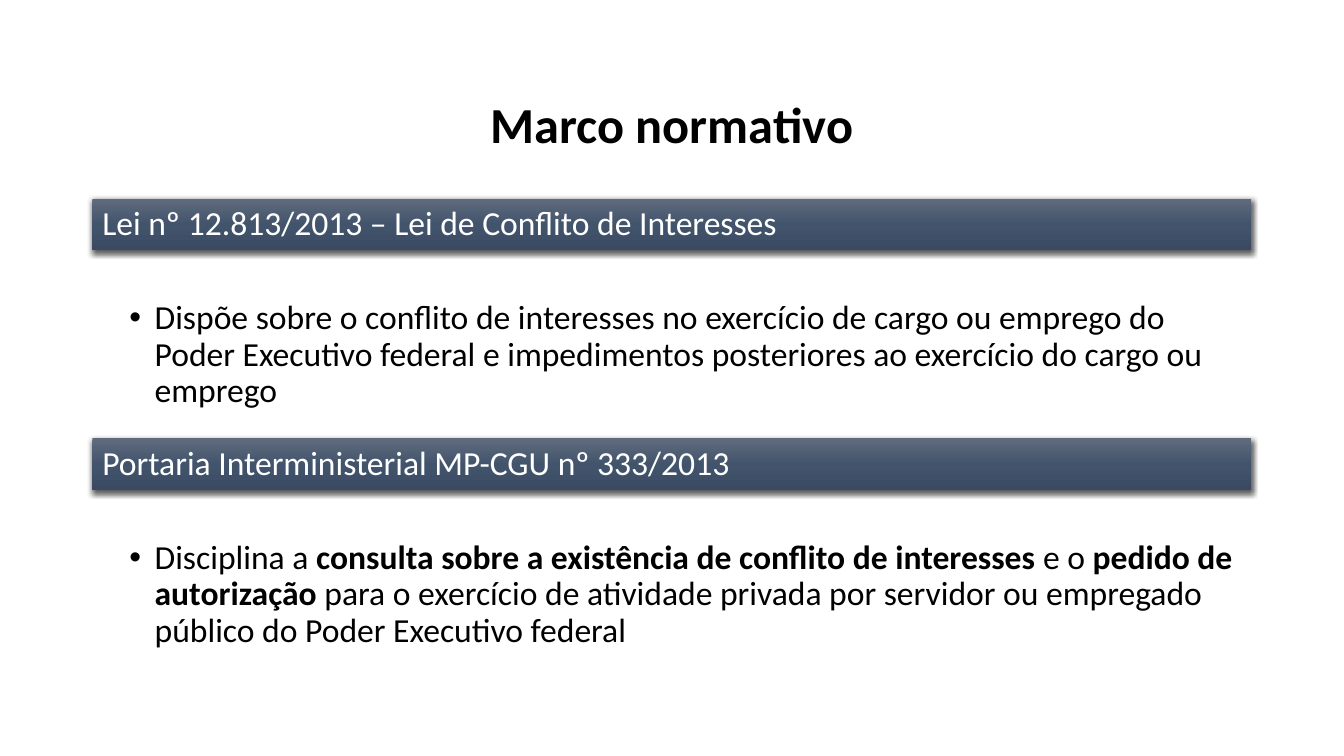
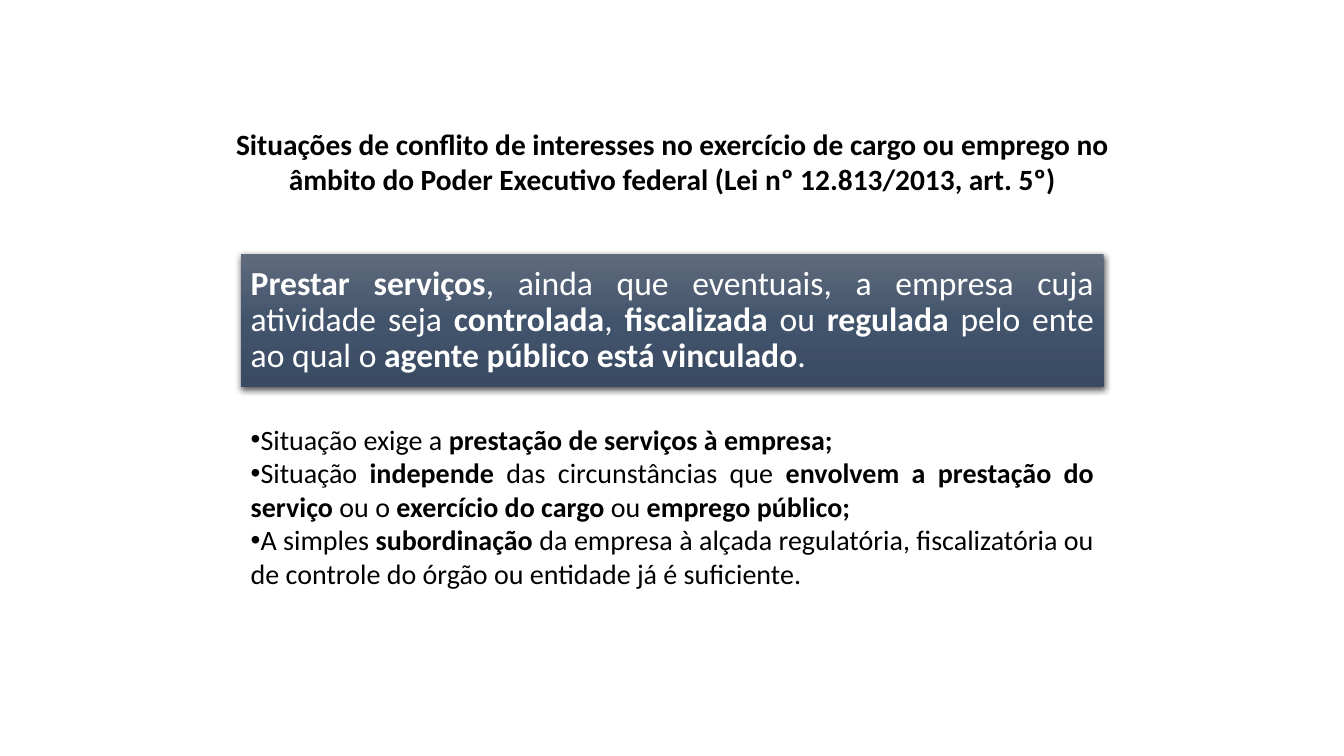
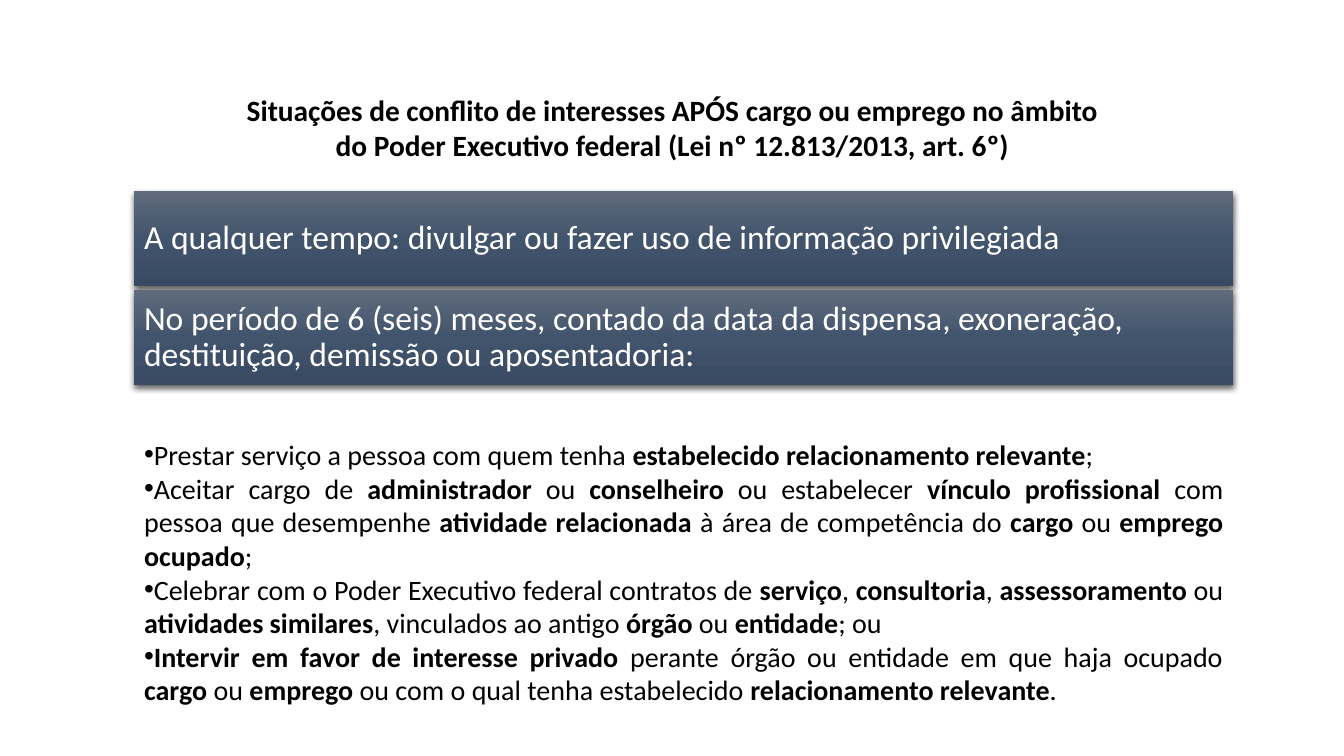
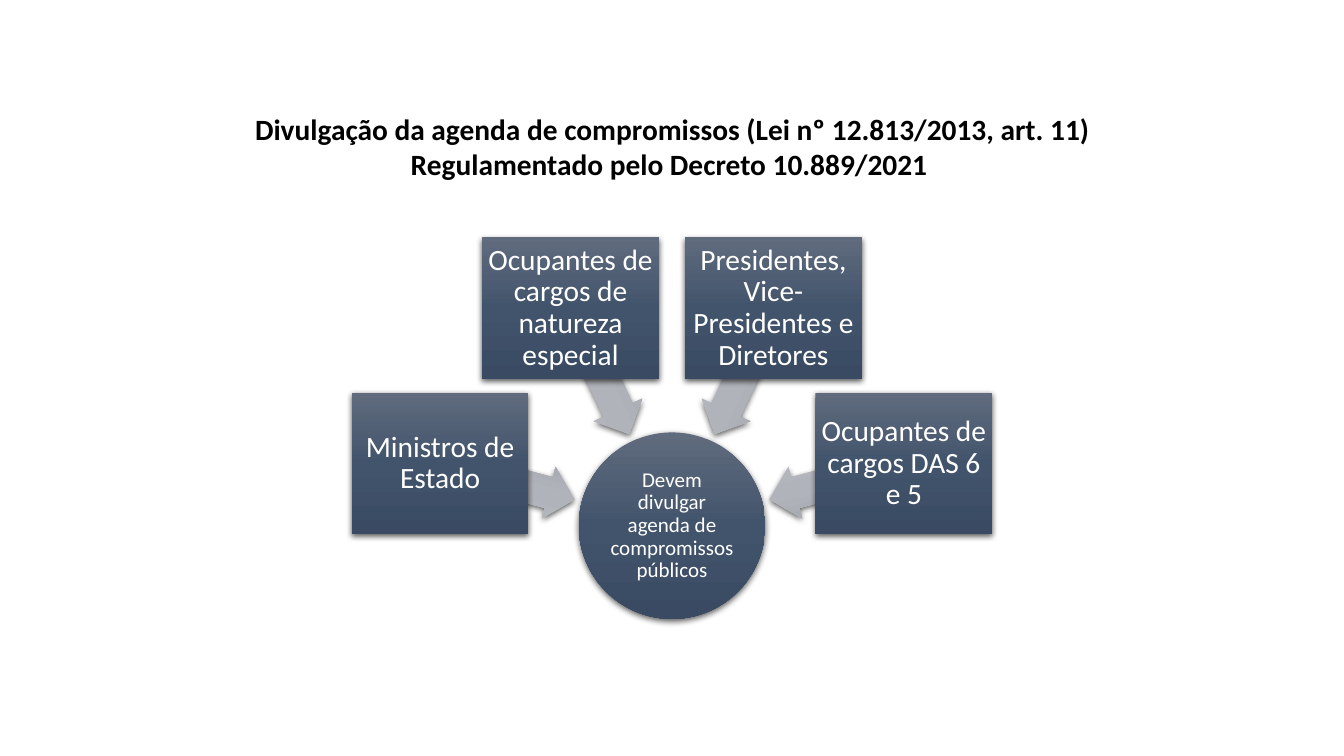
"""Build four slides on the Brazilian conflict of interests law."""
from copy import deepcopy
from dataclasses import dataclass
from math import cos, radians, sin

from lxml import etree
from pptx import Presentation
from pptx.dml.color import RGBColor
from pptx.enum.shapes import MSO_SHAPE
from pptx.enum.text import MSO_ANCHOR, MSO_AUTO_SIZE, PP_ALIGN
from pptx.oxml.ns import qn
from pptx.presentation import Presentation as Deck
from pptx.shapes.autoshape import Shape
from pptx.slide import Slide
from pptx.text.text import TextFrame
from pptx.util import Pt

RECTANGLE = MSO_SHAPE.RECTANGLE
ELLIPSE = MSO_SHAPE.OVAL
LEFT_ARROW = MSO_SHAPE.LEFT_ARROW
LEFT, CENTER, JUSTIFY = PP_ALIGN.LEFT, PP_ALIGN.CENTER, PP_ALIGN.JUSTIFY
TOP, MIDDLE = MSO_ANCHOR.TOP, MSO_ANCHOR.MIDDLE
GROW = MSO_AUTO_SIZE.SHAPE_TO_FIT_TEXT

FONT = "Calibri"
COLORS = {
    "text": "000000",
    "light": "FFFFFF",
    "shadow": "000000",
    "navy_top": "606B7D",
    "navy_middle": "42546C",
    "navy_bottom": "394A62",
    "gray_top": "BABDC2",
    "gray_middle": "B0B3BA",
    "gray_bottom": "9C9FA6",
}
SLIDE_WIDTH, SLIDE_HEIGHT = 960, 540
TIGHT = 0.9


@dataclass(frozen=True)
class Box:
    """Position and size in points."""

    left: float
    top: float
    width: float
    height: float

    @classmethod
    def around(cls, x: float, y: float, width: float, height: float) -> "Box":
        """Return the box centred on a point."""
        return cls(x - width / 2, y - height / 2, width, height)

    def lengths(self) -> tuple[Pt, Pt, Pt, Pt]:
        """Return the four lengths for the shape methods."""
        return Pt(self.left), Pt(self.top), Pt(self.width), Pt(self.height)


@dataclass(frozen=True)
class Norm:
    """A legal norm and what it rules."""

    top: float
    name: str
    summary: str


@dataclass(frozen=True)
class Official:
    """A group of officials and its direction from the hub in degrees."""

    angle: int
    role: str


NORMS = [
    Norm(141.8, "Lei nº 12.813/2013 – Lei de Conflito de Interesses",
         "Dispõe sobre o conflito de interesses no exercício de cargo ou emprego do "
         "Poder Executivo federal e impedimentos posteriores ao exercício do cargo ou "
         "emprego"),
    Norm(313.2, "Portaria Interministerial MP-CGU nº 333/2013",
         "Disciplina a **consulta sobre a existência de conflito de interesses** e o "
         "**pedido de autorização** para o exercício de atividade privada por servidor "
         "ou empregado público do Poder Executivo federal"),
]
SERVICE_RULE = (
    "**Prestar serviços**, ainda que eventuais, a empresa cuja atividade seja "
    "**controlada**, **fiscalizada** ou **regulada** pelo ente ao qual o "
    "**agente público está vinculado**."
)
SERVICE_NOTES = [
    "Situação exige a **prestação de serviços à empresa;**",
    "Situação **independe **das circunstâncias que **envolvem a prestação do serviço "
    "**ou o **exercício do cargo **ou **emprego público;**",
    "A simples **subordinação** da empresa à alçada regulatória, fiscalizatória ou de "
    "controle do órgão ou entidade já é suficiente.",
]
PERIODS = [
    "A qualquer tempo: divulgar ou fazer uso de informação privilegiada",
    "No período de 6 (seis) meses, contado da data da dispensa, exoneração, "
    "destituição, demissão ou aposentadoria:",
]
RESTRICTIONS = [
    "Prestar serviço a pessoa com quem tenha **estabelecido relacionamento relevante**;",
    "Aceitar cargo de **administrador** ou **conselheiro** ou estabelecer **vínculo "
    "profissional **com pessoa que desempenhe **atividade relacionada **à área de "
    "competência do **cargo** ou **emprego ocupado**;",
    "Celebrar com o Poder Executivo federal contratos de **serviço**, **consultoria**, "
    "**assessoramento** ou **atividades similares**, vinculados ao antigo **órgão** ou "
    "**entidade**; ou",
    "**Intervir em favor de interesse privado** perante órgão ou entidade em que haja "
    "ocupado **cargo** ou **emprego** ou com o qual tenha estabelecido** relacionamento "
    "relevante**.",
]
OFFICIALS = [
    Official(195, "Ministros de Estado"),
    Official(245, "Ocupantes de cargos de natureza especial"),
    Official(295, "Presidentes, Vice-Presidentes e Diretores"),
    Official(345, "Ocupantes de cargos DAS 6 e 5"),
]


def write(frame: TextFrame, *texts: str, size: float, color: str = "text",
          bold: bool = False, align: PP_ALIGN = LEFT, anchor: MSO_ANCHOR = TOP,
          spacing: float = 1.0, bullet: bool = False, hanging: float = 0,
          text_left: float = 0,
          insets: tuple[float, float, float, float] = (7.2, 3.6, 7.2, 3.6)) -> None:
    """Write one paragraph per text, with bold parts between double asterisks."""
    frame.word_wrap = True
    frame.vertical_anchor = anchor
    (frame.margin_left, frame.margin_top,
     frame.margin_right, frame.margin_bottom) = map(Pt, insets)
    for index, text in enumerate(texts):
        paragraph = frame.add_paragraph() if index else frame.paragraphs[0]
        paragraph.alignment = align
        paragraph.line_spacing = spacing
        if bullet:
            properties = paragraph._p.get_or_add_pPr()
            properties.set("marL", str(int(Pt(text_left))))
            properties.set("indent", str(-int(Pt(hanging))))
            etree.SubElement(properties, qn("a:buFont"), typeface="Arial")
            etree.SubElement(properties, qn("a:buChar"), char="•")
        for part_index, part in enumerate(text.split("**")):
            if part:
                run = paragraph.add_run()
                run.text = part
                run.font.name = FONT
                run.font.size = Pt(size)
                run.font.bold = bold or part_index % 2 == 1
                run.font.color.rgb = RGBColor.from_string(COLORS[color])


def add_panel(slide: Slide, kind: MSO_SHAPE, box: Box, tone: str = "navy") -> Shape:
    """Add a shape with a three-stop gradient and a soft shadow."""
    panel = slide.shapes.add_shape(kind, *box.lengths())
    panel.line.fill.background()
    panel.fill.gradient()
    panel.fill.gradient_angle = 270
    stop_list = panel.element.spPr.find(qn("a:gradFill")).find(qn("a:gsLst"))
    stop_list.append(deepcopy(stop_list[-1]))
    for stop, position, part in zip(panel.fill.gradient_stops, (0, 0.5, 1),
                                    ("top", "middle", "bottom")):
        stop.position = position
        stop.color.rgb = RGBColor.from_string(COLORS[f"{tone}_{part}"])
    panel.shadow.inherit = False
    effects = panel.element.spPr.find(qn("a:effectLst"))
    shadow = etree.SubElement(effects, qn("a:outerShdw"), blurRad=str(int(Pt(4.5))),
                              dist=str(int(Pt(1.5))), dir="5400000", rotWithShape="0")
    shadow_color = etree.SubElement(shadow, qn("a:srgbClr"), val=COLORS["shadow"])
    etree.SubElement(shadow_color, qn("a:alpha"), val="63000")
    return panel


def add_band(slide: Slide, box: Box, text: str, align: PP_ALIGN = LEFT) -> None:
    """Add a dark band with a statement."""
    write(add_panel(slide, RECTANGLE, box).text_frame, text, size=24, color="light",
          align=align, anchor=MIDDLE, spacing=TIGHT, insets=(7.2,) * 4)


def add_title(slide: Slide, top: float, *lines: str) -> None:
    """Add the centred bold heading of an article slide."""
    heading = slide.shapes.add_textbox(*Box(161.3, top, 638, 49).lengths())
    write(heading.text_frame, *lines, size=21, bold=True, align=CENTER, anchor=MIDDLE,
          insets=(5, 3, 5, 3))


def add_points(slide: Slide, box: Box, points: list[str]) -> None:
    """Add justified bulleted points."""
    frame = slide.shapes.add_textbox(*box.lengths()).text_frame
    write(frame, *points, size=20, align=JUSTIFY, bullet=True, hanging=22.5)
    frame.auto_size = GROW


def add_slide(deck: Deck) -> Slide:
    """Add a slide with the blank layout."""
    return deck.slides.add_slide(deck.slide_layouts[6])


def build_norms(deck: Deck) -> None:
    """Build the slide of the legal framework."""
    slide = add_slide(deck)
    left, width, band_height = 66, 828, 37
    heading = slide.shapes.add_textbox(*Box(left, 70.6, width, 41).lengths())
    write(heading.text_frame, "Marco normativo", size=36, bold=True, align=CENTER,
          anchor=MIDDLE, spacing=TIGHT)
    for norm in NORMS:
        add_band(slide, Box(left, norm.top, width, band_height), norm.name)
        summary = slide.shapes.add_textbox(
            *Box(left, norm.top + band_height, width, 134).lengths())
        write(summary.text_frame, norm.summary, size=24, spacing=TIGHT, bullet=True,
              hanging=18, text_left=18, insets=(26.5, 36, 13.5, 2))


def build_during_office(deck: Deck) -> None:
    """Build the slide of conflicts while in office."""
    slide = add_slide(deck)
    left, width = 172, 616.4
    add_title(slide, 90.7,
              "Situações de conflito de interesses no exercício de cargo ou emprego no "
              "âmbito do Poder Executivo federal (Lei nº 12.813/2013, art. 5º)")
    add_band(slide, Box(left, 181.4, width, 95), SERVICE_RULE, JUSTIFY)
    add_points(slide, Box(left, 298, width, 128), SERVICE_NOTES)


def build_after_office(deck: Deck) -> None:
    """Build the slide of conflicts after leaving office."""
    slide = add_slide(deck)
    left, width, first_top, pitch = 95.8, 785, 136.8, 70.5
    add_title(slide, 66.2,
              "Situações de conflito de interesses APÓS cargo ou emprego no âmbito do "
              "Poder Executivo federal (Lei nº 12.813/2013, art. 6º)")
    for index, period in enumerate(PERIODS):
        add_band(slide, Box(left, first_top + index * pitch, width, 67.7), period)
    add_points(slide, Box(left, 309, width, 201), RESTRICTIONS)


def build_agenda(deck: Deck) -> None:
    """Build the slide of officials who must publish their agenda."""
    slide = add_slide(deck)
    hub_x, hub_y, hub_size = SLIDE_WIDTH / 2, 375.5, 133.2
    arrow_radius, role_radius = 121.5, 171.5
    add_title(slide, 80, "Divulgação da agenda de compromissos (Lei nº 12.813/2013, art. 11)",
              "Regulamentado pelo Decreto 10.889/2021 ")
    hub = add_panel(slide, ELLIPSE, Box.around(hub_x, hub_y, hub_size, hub_size))
    write(hub.text_frame, "Devem divulgar agenda de compromissos públicos", size=15,
          color="light", align=CENTER, anchor=MIDDLE, spacing=TIGHT, insets=(0.7,) * 4)
    for official in OFFICIALS:
        across, down = cos(radians(official.angle)), sin(radians(official.angle))
        arrow = add_panel(slide, LEFT_ARROW,
                          Box.around(hub_x + arrow_radius * across,
                                     hub_y + arrow_radius * down, 98.6, 38), "gray")
        arrow.rotation = official.angle
        arrow.adjustments[0], arrow.adjustments[1] = 0.6, 0.5
        role = add_panel(slide, RECTANGLE,
                         Box.around(hub_x + role_radius * across,
                                    hub_y + role_radius * down, 126.3, 101))
        write(role.text_frame, official.role, size=21, color="light", align=CENTER,
              anchor=MIDDLE, spacing=TIGHT, insets=(3,) * 4)


def main() -> None:
    """Build and save the presentation."""
    deck = Presentation()
    deck.slide_width, deck.slide_height = Pt(SLIDE_WIDTH), Pt(SLIDE_HEIGHT)
    build_norms(deck)
    build_during_office(deck)
    build_after_office(deck)
    build_agenda(deck)
    deck.save("out.pptx")


if __name__ == "__main__":
    main()
